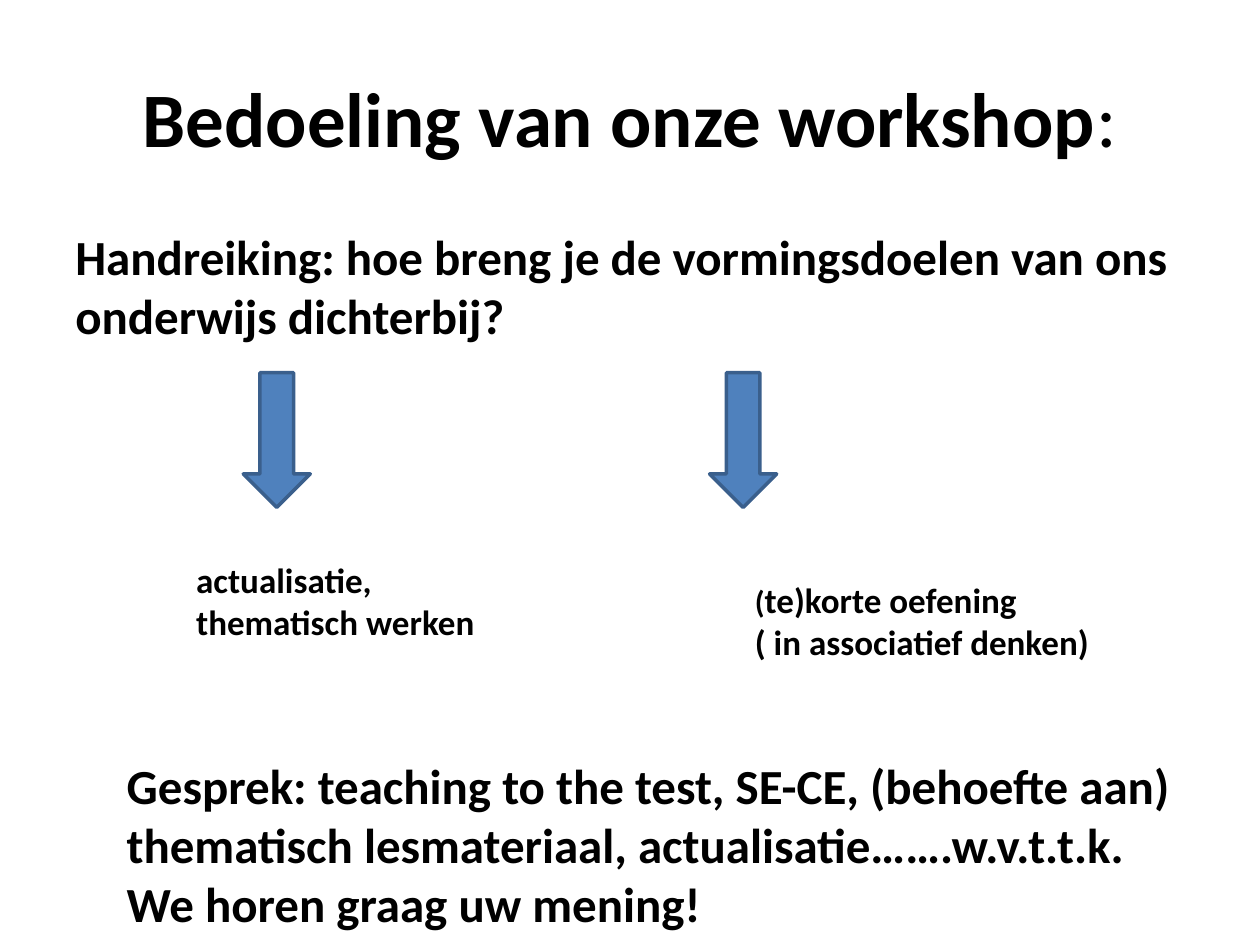
from pptx import Presentation
from pptx.dml.color import RGBColor
from pptx.enum.shapes import MSO_SHAPE as Shape
from pptx.enum.text import MSO_ANCHOR as Anchor, PP_ALIGN as Align
from pptx.util import Pt

FONT = "Calibri"
BLACK, BLUE, DARK_BLUE = "000000", "4F81BD", "3A5F8C"


def color(hex_code):
    return RGBColor.from_string(hex_code)


def add_text(s, box, paragraphs, size=20, bold=True, align=Align.LEFT,
             anchor=Anchor.TOP, wrap=False, before=0):
    tf = s.shapes.add_textbox(*map(Pt, box)).text_frame
    tf.word_wrap = wrap
    tf.vertical_anchor = anchor
    for i, runs in enumerate(paragraphs):
        p = tf.add_paragraph() if i else tf.paragraphs[0]
        p.alignment = align
        p.space_before = Pt(before)
        for text, changes in [(runs, {})] if isinstance(runs, str) else runs:
            r = p.add_run()
            r.text = text
            r.font.name = FONT
            r.font.size = Pt(changes.get("size", size))
            r.font.bold = changes.get("bold", bold)
            r.font.color.rgb = color(BLACK)


def add_down_arrow(s, left, top, width, height):
    sp = s.shapes.add_shape(Shape.DOWN_ARROW, Pt(left), Pt(top), Pt(width), Pt(height))
    sp.shadow.inherit = False
    sp.fill.solid()
    sp.fill.fore_color.rgb = color(BLUE)
    sp.line.color.rgb = color(DARK_BLUE)
    sp.line.width = Pt(2)


def main():
    prs = Presentation()
    prs.slide_width, prs.slide_height = Pt(720), Pt(540)
    s = prs.slides.add_slide(prs.slide_layouts[6])

    add_text(s, (36, 21.6, 648, 90),
             [[("Bedoeling van onze workshop", {}), (":", {"bold": False})]],
             size=44, align=Align.CENTER, anchor=Anchor.MIDDLE, wrap=True)
    add_text(s, (36, 126, 648, 356.4),
             ["Handreiking: hoe breng je de vormingsdoelen van ons onderwijs dichterbij?"],
             size=28, wrap=True, before=5.6)

    for left in (139, 405.5):
        add_down_arrow(s, left, 213, 38.3, 77)

    add_text(s, (105, 315.5, 180.7, 55.4), ["actualisatie,", "thematisch werken"])
    add_text(s, (424.3, 326.8, 207.4, 55.4),
             [[("(", {"size": 18}), ("te)korte oefening", {})],
              "( in associatief denken)"])
    add_text(s, (65.3, 428.4, 625.7, 108.7),
             ["Gesprek: teaching to the test, SE-CE, (behoefte aan)",
              "thematisch lesmateriaal, actualisatie…….w.v.t.t.k.",
              "We horen graag uw mening!"], size=28)

    prs.save("out.pptx")


if __name__ == "__main__":
    main()
